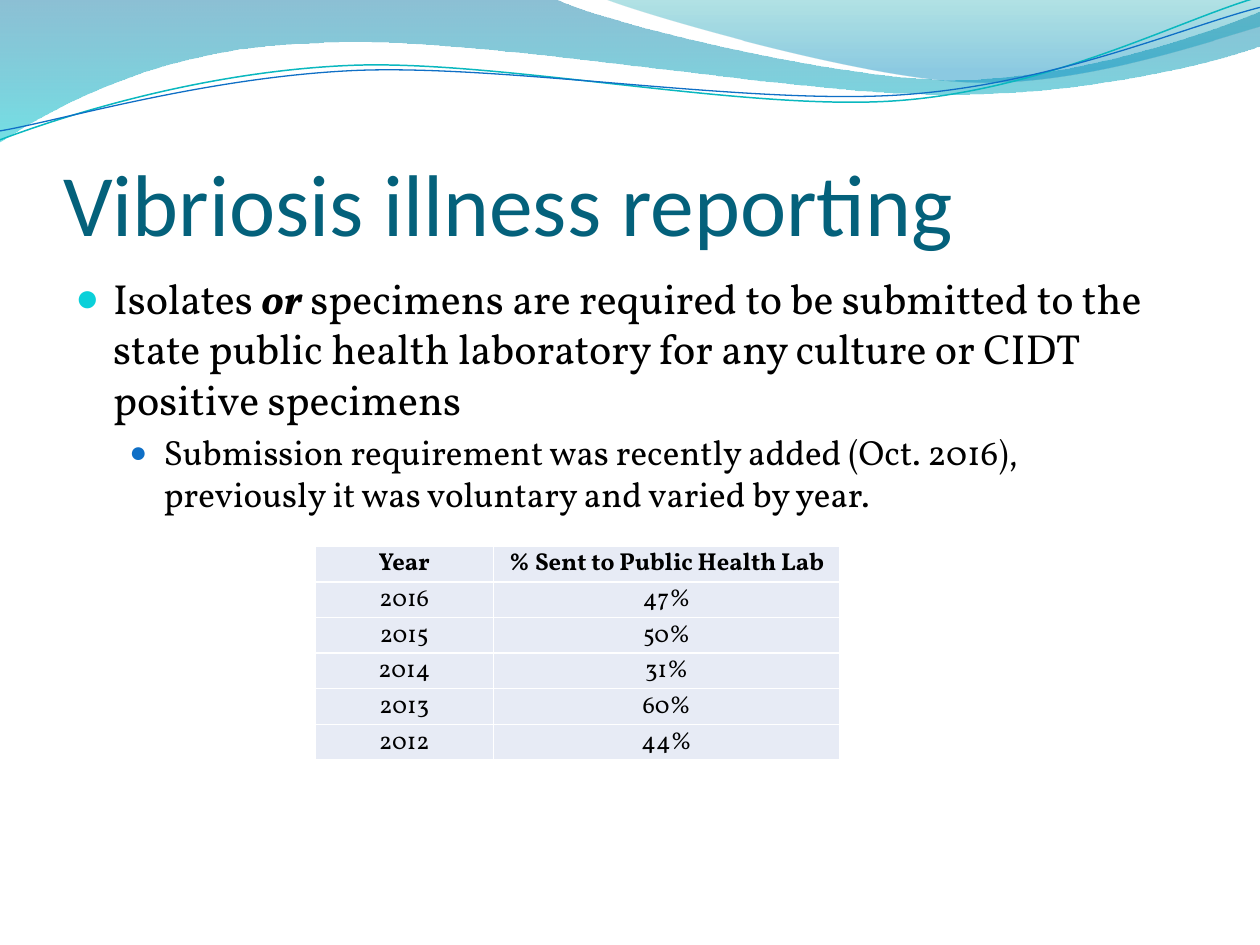
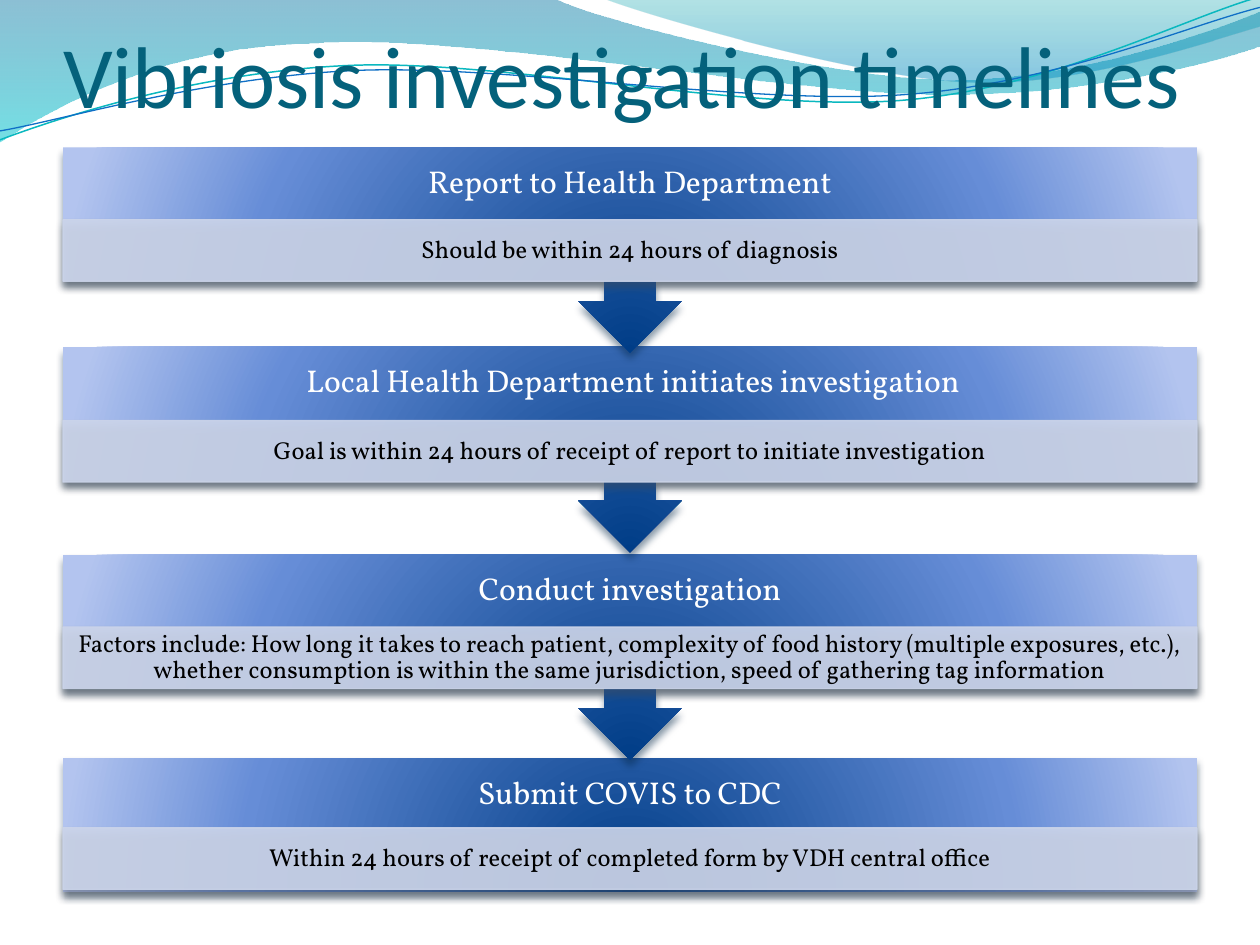
from pptx import Presentation
from pptx import util as u
from pptx.dml.color import RGBColor
from pptx.enum import shapes, text
from pptx.oxml import parse_xml
from pptx.oxml.ns import nsdecls, qn

TITLE_FONT, BODY_FONT = "Calibri", "Vollkorn"
TITLE_COLOR, BLACK, WHITE = "04617B", "000000", "FFFFFF"
TEAL, BLUE = "0BD0D9", "0F6FC6"
CELL_FILL, DETAIL_FILL = "E7EBF5", "CCD5EA"
LEFT, WIDTH = 1.27, 22.86

# Header waves: a start point, then line ends (one point) or curves (three points)
BROAD_WAVE = [
    (0, 0), [(11.18, -0.03)],
    [(12.09, 0.43), (16.87, 1.6), (19.25, 1.6)],
    [(21.67, 1.6), (24.33, 0.66), (25.4, 0.23)],
    [(25.43, 0.91)],
    [(24.97, 1.12), (22.1, 1.93), (18.95, 1.9)],
    [(15.8, 1.9), (9.7, 0.71), (6.53, 0.86)],
    [(3.28, 0.91), (1.17, 2.11), (-0.03, 2.87)],
    [(0, 0)],
]
RIGHT_WAVE = [
    (12.17, -0.03),
    [(12.93, 0.28), (17.32, 1.57), (19.53, 1.65)],
    [(21.74, 1.75), (24.41, 0.81), (25.4, 0.53)],
    [(25.4, 0)],
    [(12.17, -0.03)],
]
TEAL_LINE = [
    (0, 2.82),
    [(1.22, 2.36), (4.01, 1.45), (7.04, 1.32)],
    [(10.03, 1.19), (15.06, 2.26), (18.11, 2.03)],
    [(21.16, 1.8), (23.83, 0.38), (25.35, -0.05)],
]
BLUE_LINE = [
    (0, 2.64),
    [(1.19, 2.44), (4.17, 1.55), (7.19, 1.42)],
    [(10.24, 1.3), (15.16, 2.13), (18.21, 1.91)],
    [(21.23, 1.7), (23.9, 0.53), (25.4, 0.15)],
]

LAB_TABLE = [
    ("Year", "% Sent to Public Health Lab"),
    ("2016", "47%"),
    ("2015", "50%"),
    ("2014", "31%"),
    ("2013", "60%"),
    ("2012", "44%"),
]

# Step top, detail top, heading, detail
STEPS = [
    (2.97, 4.43, "Report to Health Department",
     "Should be within 24 hours of diagnosis"),
    (6.99, 8.48, " Local Health Department initiates investigation",
     "Goal is within 24 hours of receipt of report to initiate investigation"),
    (11.18, 12.64, "Conduct investigation",
     "Factors include: How long it takes to reach patient, complexity of food "
     "history (multiple exposures, etc.), whether consumption is within the same "
     "jurisdiction, speed of gathering tag information"),
    (15.29, 16.69, "Submit COVIS to CDC",
     "Within 24 hours of receipt of completed form by VDH central office"),
]
HEADING_HEIGHT, DETAIL_HEIGHT = 1.45, 1.24
STEP_STOPS = [(0, "003D87", 100), (68, "668DD7", 100), (100, "B3C4EF", 100)]
STEP_GLOW = ('<a:path path="circle"><a:fillToRect l="50000" t="130000" '
             'r="50000" b="-30000"/></a:path>')
DOWNWARD = '<a:lin ang="5400000" scaled="1"/>'


def rgb(value):
    return RGBColor.from_string(value)


def cm(*values):
    return [u.Cm(value) for value in values]


def style_font(font, size, color, name=BODY_FONT, bold=None):
    font.name, font.size, font.bold = name, u.Pt(size), bold
    font.color.rgb = rgb(color)


def set_margins(target, left, top, right, bottom):
    (target.margin_left, target.margin_top,
     target.margin_right, target.margin_bottom) = cm(left, top, right, bottom)


def gradient_fill(shape, stops, direction):
    stop_xml = "".join(
        f'<a:gs pos="{position * 1000}"><a:srgbClr val="{color}">'
        f'<a:alpha val="{opacity * 1000}"/></a:srgbClr></a:gs>'
        for position, color, opacity in stops)
    shape.fill.background()
    properties = shape.element.spPr
    properties.replace(properties.find(qn("a:noFill")), parse_xml(
        f'<a:gradFill {nsdecls("a")} rotWithShape="1"><a:gsLst>{stop_xml}</a:gsLst>'
        f'{direction}</a:gradFill>'))


def drop_shadow(shape, color):
    shape.shadow.inherit = False
    shape.element.spPr.find(qn("a:effectLst")).append(parse_xml(
        f'<a:outerShdw {nsdecls("a")} blurRad="57150" dist="38100" dir="5400000" '
        f'algn="ctr" rotWithShape="0"><a:srgbClr val="{color}">'
        f'<a:alpha val="48000"/></a:srgbClr></a:outerShdw>'))


# Header waves
def add_curve(page, outline, closed):
    """Build the outline from its points, then join each three into a Bézier curve."""
    start, *segments = outline
    builder = page.shapes.build_freeform(*cm(*start))
    builder.add_line_segments([cm(*point) for segment in segments for point in segment],
                              close=closed)
    curve = builder.convert_to_shape()
    curve.shadow.inherit = False
    corners = iter(list(curve.element.spPr.iter(qn("a:lnTo"))))
    for segment in segments:
        first, *others = [next(corners) for _ in segment]
        if others:
            bezier = parse_xml(f'<a:cubicBezTo {nsdecls("a")}/>')
            first.addprevious(bezier)
            for corner in (first, *others):
                bezier.append(corner[0])
                corner.getparent().remove(corner)
    return curve


def add_waves(layout, page):
    """Draw the waves on a page, then move them to the layout all pages share."""
    for placeholder in list(layout.placeholders):
        if placeholder.placeholder_format.idx:
            layout.shapes.element.remove(placeholder.element)
    waves = []
    for outline, stops in (
            (BROAD_WAVE, [(0, "0074A1", 45), (100, "00C6CF", 55)]),
            (RIGHT_WAVE, [(0, "00A1A9", 30), (80, "008BBF", 45)])):
        wave = add_curve(page, outline, True)
        gradient_fill(wave, stops, DOWNWARD)
        wave.line.fill.background()
        waves.append(wave)
    for outline, color, weight in ((TEAL_LINE, "0AB8BF", 0.85), (BLUE_LINE, BLUE, 0.75)):
        wave = add_curve(page, outline, False)
        wave.fill.background()
        wave.line.color.rgb = rgb(color)
        wave.line.width = u.Pt(weight)
        waves.append(wave)
    for wave in waves:
        layout.shapes.element.append(wave.element)


def set_title(page, words, top, height):
    title = page.shapes.title
    title.left, title.top, title.width, title.height = cm(LEFT, top, WIDTH, height)
    frame = title.text_frame
    frame.text = words
    frame.auto_size = text.MSO_AUTO_SIZE.NONE
    frame.vertical_anchor = text.MSO_ANCHOR.BOTTOM
    set_margins(frame, 0, 0.13, 0, 0)
    para = frame.paragraphs[0]
    para.alignment = text.PP_ALIGN.LEFT
    style_font(para.font, 50, TITLE_COLOR, TITLE_FONT)


# Reporting page
def format_bullet(para, level, indent, hanging, size, color, bullet_size):
    para.level = level
    para.space_before = u.Pt(size * 0.2)
    style_font(para.font, size, BLACK)
    properties = para._p.get_or_add_pPr()
    properties.set("marL", str(u.Cm(indent)))
    properties.set("indent", str(-u.Cm(hanging)))
    bullet = parse_xml(
        f'<a:pPr {nsdecls("a")}><a:buClr><a:srgbClr val="{color}"/></a:buClr>'
        f'<a:buSzPct val="{bullet_size * 1000}"/><a:buFont typeface="Arial"/>'
        f'<a:buChar char="●"/></a:pPr>')
    default_run = properties.find(qn("a:defRPr"))
    for part in list(bullet):
        default_run.addprevious(part)


def add_requirements(page):
    frame = page.shapes.add_textbox(*cm(LEFT, 5.37, WIDTH, 12.19)).text_frame
    frame.word_wrap = True
    para = frame.paragraphs[0]
    for words, strong in (
            ("Isolates ", False), ("or ", True),
            ("specimens are required to be submitted to the state public health "
             "laboratory for any culture or CIDT positive specimens", False)):
        span = para.add_run()
        span.text = words
        span.font.bold = span.font.italic = strong
    format_bullet(para, 0, 0.76, 0.76, 24, TEAL, 95)
    para = frame.add_paragraph()
    para.text = ("Submission requirement was recently added (Oct. 2016), "
                 "previously it was voluntary and varied by year.")
    format_bullet(para, 1, 1.78, 0.69, 20, BLUE, 85)


def format_cell(cell, words, bold):
    properties = cell._tc.get_or_add_tcPr()
    for side in "LRTB":
        properties.append(parse_xml(
            f'<a:ln{side} {nsdecls("a")} w="12700"><a:solidFill>'
            f'<a:srgbClr val="{WHITE}"/></a:solidFill></a:ln{side}>'))
    cell.fill.solid()
    cell.fill.fore_color.rgb = rgb(CELL_FILL)
    cell.vertical_anchor = text.MSO_ANCHOR.BOTTOM
    set_margins(cell, 0.03, 0.03, 0.03, 0)
    cell.text = words
    para = cell.text_frame.paragraphs[0]
    para.alignment = text.PP_ALIGN.CENTER
    style_font(para.font, 14, BLACK, bold=bold)


def add_lab_table(page):
    table = page.shapes.add_table(len(LAB_TABLE), 2, *cm(6.35, 11.01, 10.58, 4.31)).table
    table.first_row = table.horz_banding = False
    for column, width in zip(table.columns, cm(3.6, 6.98)):
        column.width = width
    for row_number, values in enumerate(LAB_TABLE):
        for column_number, words in enumerate(values):
            format_cell(table.cell(row_number, column_number), words, row_number == 0)


# Timeline page
def add_label(page, words, top, height, size, color, side_margin, end_margin):
    frame = page.shapes.add_textbox(*cm(LEFT, top, WIDTH, height)).text_frame
    frame.word_wrap = True
    frame.vertical_anchor = text.MSO_ANCHOR.MIDDLE
    set_margins(frame, side_margin, end_margin, side_margin, end_margin)
    frame.text = words
    para = frame.paragraphs[0]
    para.alignment = text.PP_ALIGN.CENTER
    para.line_spacing = 0.9
    style_font(para.font, size, color)


def add_step(page, top, detail_top, heading, detail, last):
    kind = shapes.MSO_SHAPE.RECTANGLE if last else shapes.MSO_SHAPE.DOWN_ARROW_CALLOUT
    height = 2.69 if last else 4.14
    box = page.shapes.add_shape(kind, *cm(LEFT, top, WIDTH, height))
    gradient_fill(box, STEP_STOPS, STEP_GLOW)
    box.line.fill.background()
    drop_shadow(box, "042747")
    add_label(page, heading, top, HEADING_HEIGHT, 18, WHITE, 0.36, 0.36)

    strip = page.shapes.add_shape(shapes.MSO_SHAPE.RECTANGLE,
                                  *cm(LEFT, detail_top, WIDTH, DETAIL_HEIGHT))
    strip.fill.solid()
    strip.fill.fore_color.rgb = strip.line.color.rgb = rgb(DETAIL_FILL)
    strip.line.width = u.Pt(0.75)
    for color in strip.element.spPr.iter(qn("a:srgbClr")):
        color.append(parse_xml(f'<a:alpha {nsdecls("a")} val="90000"/>'))
    drop_shadow(strip, "474B53")
    add_label(page, detail, detail_top, DETAIL_HEIGHT, 14, BLACK, 0.28, 0.05)


def main():
    deck = Presentation()
    deck.slide_width, deck.slide_height = cm(25.4, 19.05)
    layout = deck.slide_layouts[5]

    page = deck.slides.add_slide(layout)
    add_waves(layout, page)
    set_title(page, "Vibriosis illness reporting", 1.95, 3.17)
    add_requirements(page)
    add_lab_table(page)

    page = deck.slides.add_slide(layout)
    set_title(page, "Vibriosis investigation timelines", 0.2, 2.34)
    # Last step first, so each arrow tip lies over the step below
    for step in reversed(STEPS):
        add_step(page, *step, last=step is STEPS[-1])

    deck.save("out.pptx")


if __name__ == "__main__":
    main()
